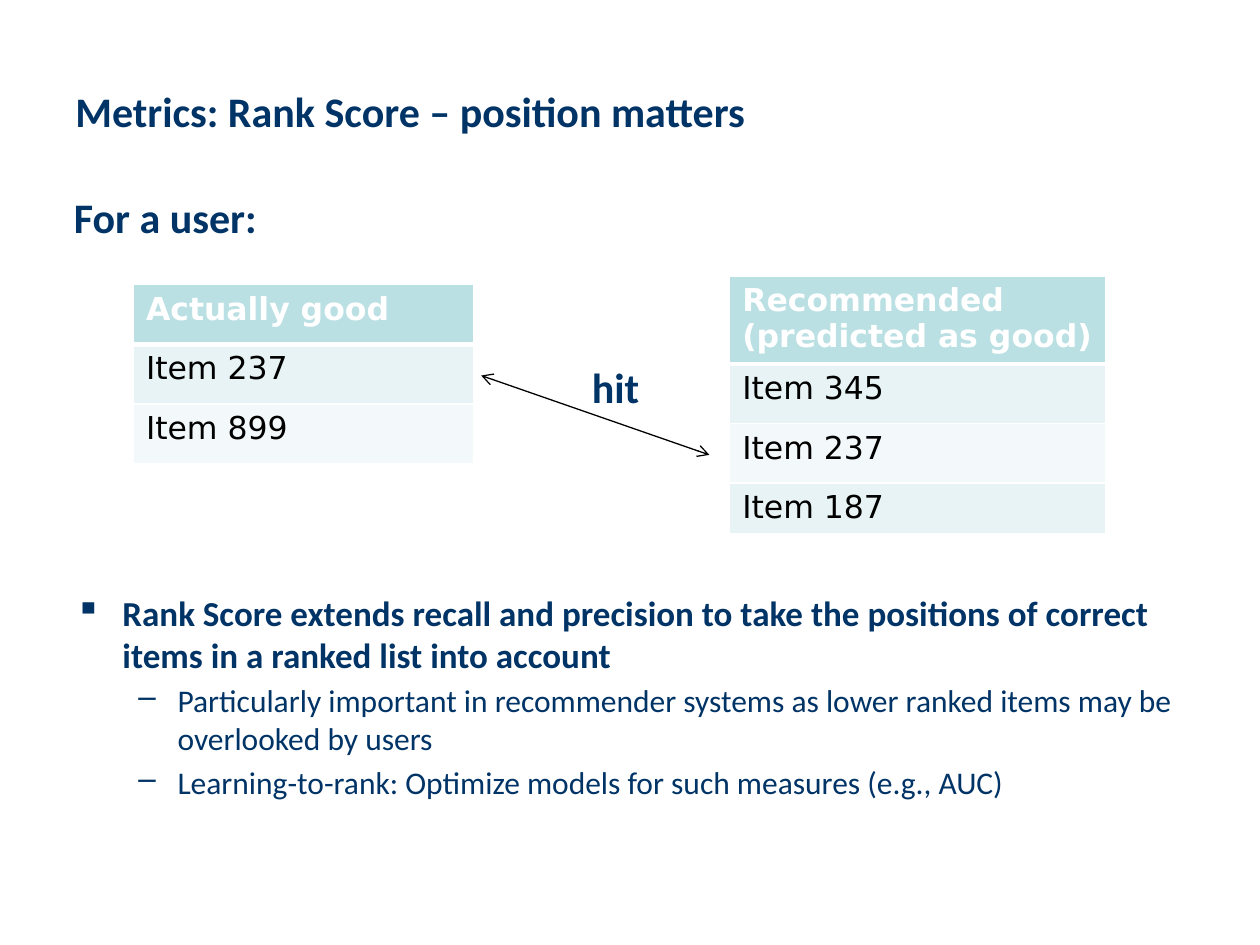
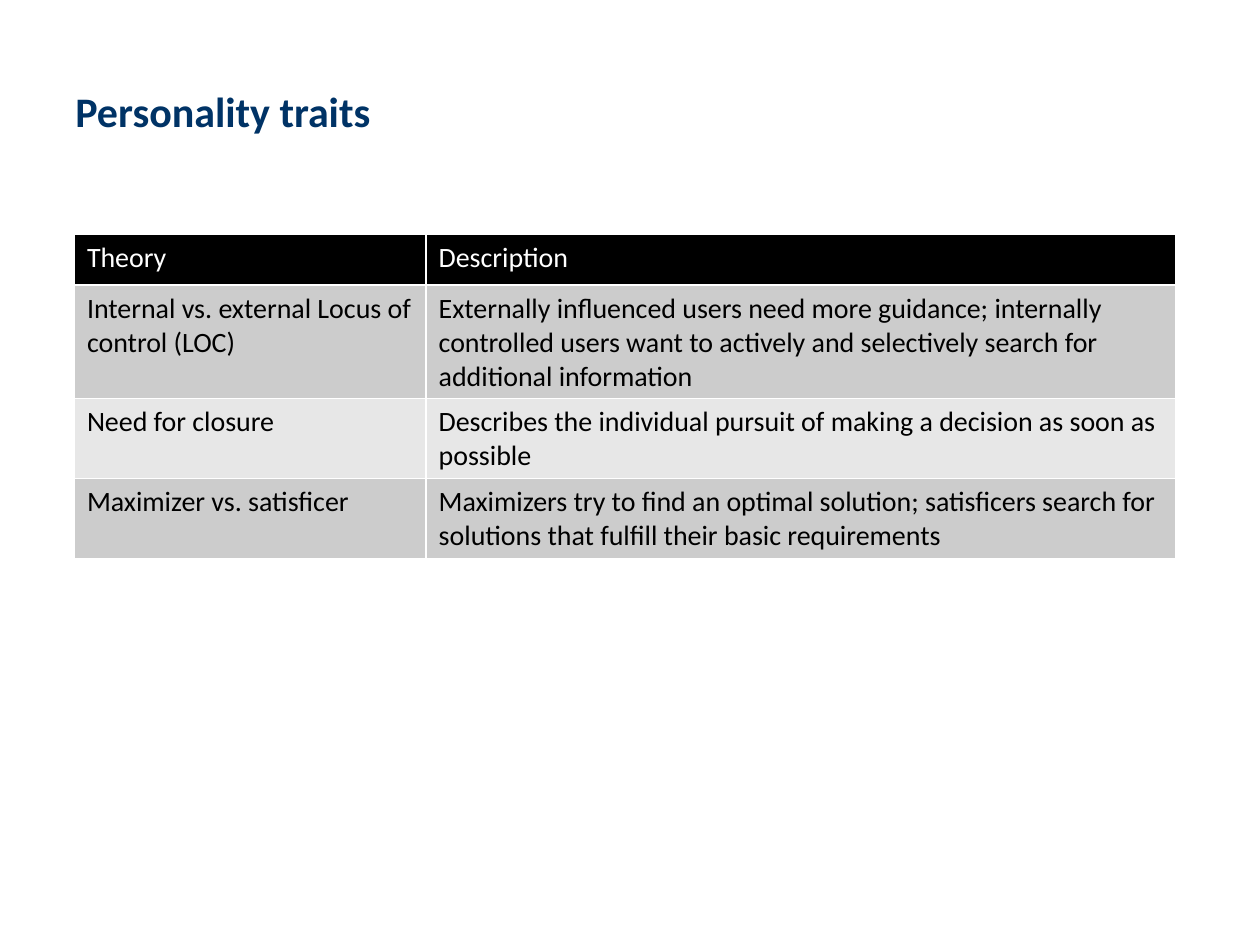
import pptx
import pptx.dml.color
import pptx.enum.shapes
import pptx.enum.text
import pptx.oxml.ns
import pptx.util
from lxml import etree

Cm, Pt = pptx.util.Cm, pptx.util.Pt
NAVY, BLACK, WHITE = "003366", "000000", "FFFFFF"
SANS, WIDE = "Calibri", "DejaVu Sans"
TEAL = ("BBE0E3", "E7F3F4", "F3F9FA")
GREY = ("000000", "CCCCCC", "E7E7E7")

TITLES = ["Metrics: Rank Score – position matters", "Personality traits"]
LABELS = [
    ("For a user:", (1.24, 3.73, 4.24, 1.27)),
    ("hit", (11.68, 7.16, 1.47, 1.27)),
]
POINTS = [
    (0, "Rank Score extends recall and precision to take the positions of correct items in a ranked list into account"),
    (1, "Particularly important in recommender systems as lower ranked items may be overlooked by users"),
    (1, "Learning-to-rank: Optimize models for such measures (e.g., AUC)"),
]
LEVELS = [
    dict(mark="▪", left=0.95, hang=0.95, gap=12, size=20, bold=True),
    dict(mark="–", left=2.06, hang=0.79, gap=3.6, size=18, bold=False),
]
GOOD = [["Actually good"], ["Item 237"], ["Item 899"]]
RANKED = [["Recommended\n(predicted as good)"], ["Item 345"], ["Item 237"], ["Item 187"]]
TRAITS = [
    ["Theory", "Description"],
    ["Internal vs. external Locus of control (LOC)",
     "Externally influenced users need more guidance; internally controlled users want to "
     "actively and selectively search for additional information"],
    ["Need for closure",
     "Describes the individual pursuit of making a decision as soon as possible"],
    ["Maximizer vs. satisficer",
     "Maximizers try to find an optimal solution; satisficers search for solutions that "
     "fulfill their basic requirements"],
]


def rgb(tone):
    return pptx.dml.color.RGBColor.from_string(tone)


def node(parent, tag, **attrs):
    return etree.SubElement(parent, pptx.oxml.ns.qn(tag), **attrs)


def write(para, text, size, tone=NAVY, bold=True, face=SANS):
    run = para.add_run()
    run.text = text
    font = run.font
    font.name, font.size, font.bold = face, Pt(size), bold
    font.color.rgb = rgb(tone)


def add_box(slide, place, wrap=True):
    frame = slide.shapes.add_textbox(*map(Cm, place)).text_frame
    frame.word_wrap = wrap
    return frame


def add_title(slide, text):
    frame = add_box(slide, (1.27, 0.64, 22.86, 3.18))
    frame.vertical_anchor = pptx.enum.text.MSO_ANCHOR.MIDDLE
    write(frame.paragraphs[0], text, 24)


def add_label(slide, text, place):
    frame = add_box(slide, place, wrap=False)
    frame.auto_size = pptx.enum.text.MSO_AUTO_SIZE.SHAPE_TO_FIT_TEXT
    write(frame.paragraphs[0], text, 24)


def add_points(slide, points, place):
    frame = add_box(slide, place)
    for num, (depth, text) in enumerate(points):
        para = frame.add_paragraph() if num else frame.paragraphs[0]
        style = LEVELS[depth]
        para.level = depth
        para.space_before = Pt(style["gap"])
        props = para._p.get_or_add_pPr()
        props.set("marL", str(Cm(style["left"])))
        props.set("indent", str(-Cm(style["hang"])))
        node(props, "a:buChar", char=style["mark"])
        write(para, text, style["size"], bold=style["bold"])


def add_edges(cell, base):
    props = cell._tc.get_or_add_tcPr()
    for side, width in (("L", 1), ("R", 1), ("T", 1), ("B", base)):
        edge = node(props, f"a:ln{side}", w=str(Pt(width)))
        node(node(edge, "a:solidFill"), "a:srgbClr", val=WHITE)


def add_table(slide, data, spot, cols, rows, tones, size, face, strong):
    """Draw a table whose body rows alternate between the last two tones."""
    shape = slide.shapes.add_table(
        len(data), len(cols), *map(Cm, spot), Cm(sum(cols)), Cm(sum(rows)))
    table = shape.table
    for col, width in zip(table.columns, cols):
        col.width = Cm(width)
    for row, height in zip(table.rows, rows):
        row.height = Cm(height)
    for r, line in enumerate(data):
        head = r == 0
        fill = tones[0] if head else tones[1 + (r - 1) % 2]
        for c, text in enumerate(line):
            cell = table.cell(r, c)
            add_edges(cell, 3 if head and strong else 1)
            cell.fill.solid()
            cell.fill.fore_color.rgb = rgb(fill)
            frame = cell.text_frame
            for num, part in enumerate(text.split("\n")):
                para = frame.add_paragraph() if num else frame.paragraphs[0]
                write(para, part, size, WHITE if head else BLACK, head and strong, face)


def add_arrow(slide, start, end):
    link = slide.shapes.add_connector(
        pptx.enum.shapes.MSO_CONNECTOR.STRAIGHT, *map(Cm, start + end))
    link.line.color.rgb = rgb(BLACK)
    link.line.width = Pt(0.75)
    line = link.line._get_or_add_ln()
    for tip in ("a:headEnd", "a:tailEnd"):
        node(line, tip, type="arrow")
    node(link._element.spPr, "a:effectLst")


def main():
    deck = pptx.Presentation()
    deck.slide_width, deck.slide_height = Cm(25.4), Cm(19.05)
    rank, traits = [deck.slides.add_slide(deck.slide_layouts[6]) for _ in TITLES]
    for slide, text in zip((rank, traits), TITLES):
        add_title(slide, text)

    add_points(rank, POINTS, (1.27, 11.79, 22.86, 5.28))
    look = (TEAL, 18, WIDE, True)
    add_table(rank, GOOD, (2.69, 5.74), [6.86], [1.2] * 3, *look)
    add_table(rank, RANKED, (14.71, 5.56), [7.59], [1.2] * 3 + [0.99], *look)
    add_arrow(rank, (9.7, 7.57), (14.3, 9.17))
    for text, place in LABELS:
        add_label(rank, text, place)

    add_table(traits, TRAITS, (1.5, 4.72), [7.09, 15.11], [1.03] * 4, GREY, 16, SANS, False)
    deck.save("out.pptx")


if __name__ == "__main__":
    main()
